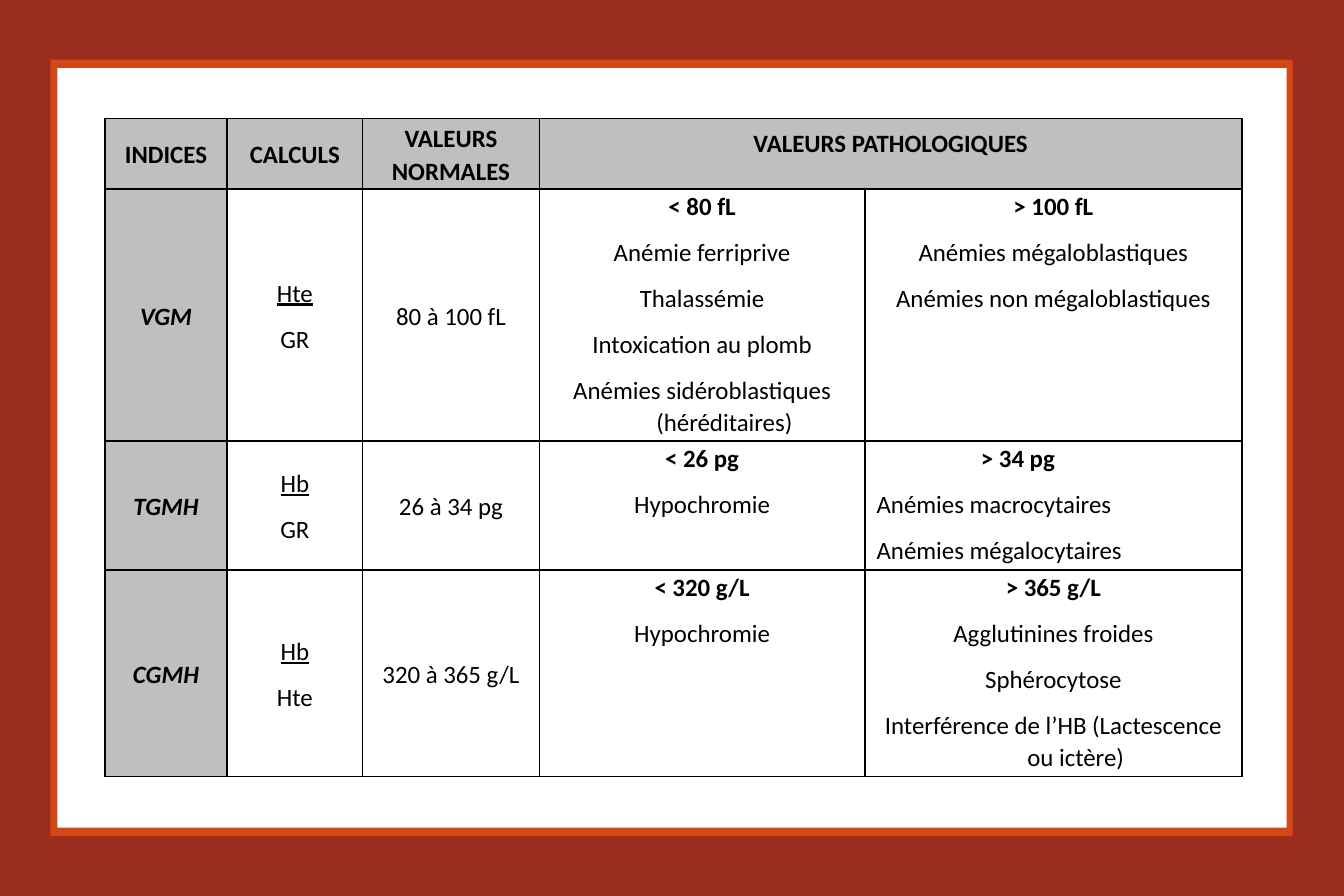
from lxml.etree import SubElement
from pptx import Presentation
from pptx.dml.color import RGBColor
from pptx.enum.shapes import MSO_SHAPE
from pptx.enum.text import MSO_ANCHOR, PP_ALIGN
from pptx.oxml.ns import qn
from pptx.util import Cm, Pt

COLOURS = {
    "brick": "9B2D1F",
    "orange": "D34817",
    "white": "FFFFFF",
    "grey": "BFBFBF",
    "black": "000000",
}
SLIDE_SIZE = (28.58, 19.05)
FRAMES = [
    ("brick", 0, 0, *SLIDE_SIZE),
    ("orange", 1.07, 1.27, 26.42, 16.51),
    ("white", 1.22, 1.45, 26.14, 16.15),
]
TABLE_ORIGIN = (2.23, 2.52)
COLUMN_WIDTHS = [2.6, 2.88, 3.76, 6.92, 8.02]
ROW_HEIGHTS = [1.5, 5.36, 2.74, 4.39]
CELL_INSETS = (0.25, 0.02, 0.25, 0)
WIDE_INSETS = (0.33, 0.18, 0.33, 0.18)
HANGING = 0.95
LEFT_HEADING_INDENT = 2.22

HEADERS = ["INDICES", "CALCULS", "VALEURS NORMALES", "VALEURS PATHOLOGIQUES"]
INDICES = [
    ("VGM", ("Hte", "GR"), "80 à 100 fL",
     ["< 80 fL", "Anémie ferriprive", "Thalassémie", "Intoxication au plomb",
      "Anémies sidéroblastiques (héréditaires)"],
     ["> 100 fL", "Anémies mégaloblastiques", "Anémies non mégaloblastiques"]),
    ("TGMH", ("Hb", "GR"), "26 à 34 pg",
     ["< 26 pg", "Hypochromie"],
     ["> 34 pg", "Anémies macrocytaires", "Anémies mégalocytaires"]),
    ("CGMH", ("Hb", "Hte"), "320 à 365 g/L",
     ["< 320 g/L", "Hypochromie"],
     ["> 365 g/L", "Agglutinines froides", "Sphérocytose",
      "Interférence de l’HB (Lactescence ou ictère)"]),
]
LEFT_ALIGNED = "> 34 pg"


def colour(name):
    return RGBColor.from_string(COLOURS[name])


def add_frame(slide, fill, *box):
    shape = slide.shapes.add_shape(MSO_SHAPE.RECTANGLE, *map(Cm, box))
    shape.shadow.inherit = False
    shape.fill.solid()
    shape.fill.fore_color.rgb = colour(fill)
    shape.line.fill.background()


def format_cell(cell, fill=None, insets=CELL_INSETS, anchor=MSO_ANCHOR.MIDDLE):
    properties = cell._tc.get_or_add_tcPr()
    for side in ("lnL", "lnR", "lnT", "lnB"):
        line = SubElement(properties, qn(f"a:{side}"), w=str(Pt(1)))
        solid = SubElement(line, qn("a:solidFill"))
        SubElement(solid, qn("a:srgbClr"), val=COLOURS["black"])
    if fill:
        cell.fill.solid()
        cell.fill.fore_color.rgb = colour(fill)
    else:
        cell.fill.background()
    cell.margin_left, cell.margin_top, cell.margin_right, cell.margin_bottom = map(Cm, insets)
    cell.vertical_anchor = anchor


def write_lines(cell, lines):
    cell.text = "\n".join(lines)
    for paragraph in cell.text_frame.paragraphs:
        paragraph.alignment = PP_ALIGN.CENTER
        paragraph.line_spacing = 1.07
        paragraph.space_after = Pt(8)
        font = paragraph.font
        font.name, font.size = "Calibri", Pt(15)
        font.color.rgb = colour("black")
    return cell.text_frame.paragraphs


def indent(paragraph, left, first):
    properties = paragraph._p.get_or_add_pPr()
    properties.set("marL", str(Cm(left)))
    properties.set("indent", str(Cm(first)))


def write_causes(cell, lines):
    heading, *causes = write_lines(cell, lines)
    heading.font.bold = True
    for cause in causes:
        indent(cause, HANGING, -HANGING)
    if lines[0] == LEFT_ALIGNED:
        indent(heading, LEFT_HEADING_INDENT, 0)
        for paragraph in (heading, *causes):
            paragraph.alignment = PP_ALIGN.LEFT


def add_indices_table(slide):
    size = (sum(COLUMN_WIDTHS), sum(ROW_HEIGHTS))
    table = slide.shapes.add_table(
        len(ROW_HEIGHTS), len(COLUMN_WIDTHS), *map(Cm, TABLE_ORIGIN + size)).table
    table.first_row = table.horz_banding = False
    for column, width in zip(table.columns, COLUMN_WIDTHS):
        column.width = Cm(width)
    for row, height in zip(table.rows, ROW_HEIGHTS):
        row.height = Cm(height)

    for column in range(len(COLUMN_WIDTHS)):
        if column < 3:
            format_cell(table.cell(0, column), "grey")
        else:
            format_cell(table.cell(0, column), "grey", WIDE_INSETS, MSO_ANCHOR.TOP)
    table.cell(0, 3).merge(table.cell(0, 4))
    for column, header in enumerate(HEADERS):
        write_lines(table.cell(0, column), [header])[0].font.bold = True

    for row, (index, ratio, normal, low, high) in enumerate(INDICES, 1):
        cells = [table.cell(row, column) for column in range(len(COLUMN_WIDTHS))]
        format_cell(cells[0], "grey")
        for cell in cells[1:3]:
            format_cell(cell)
        for cell, causes in zip(cells[3:], (low, high)):
            format_cell(cell, anchor=MSO_ANCHOR.TOP)
            write_causes(cell, causes)
        name = write_lines(cells[0], [index])[0]
        name.font.bold = name.font.italic = True
        write_lines(cells[1], ratio)[0].font.underline = True
        write_lines(cells[2], [normal])


def main():
    presentation = Presentation()
    presentation.slide_width, presentation.slide_height = map(Cm, SLIDE_SIZE)
    slide = presentation.slides.add_slide(presentation.slide_layouts[6])
    for frame in FRAMES:
        add_frame(slide, *frame)
    add_indices_table(slide)
    presentation.save("out.pptx")


if __name__ == "__main__":
    main()
